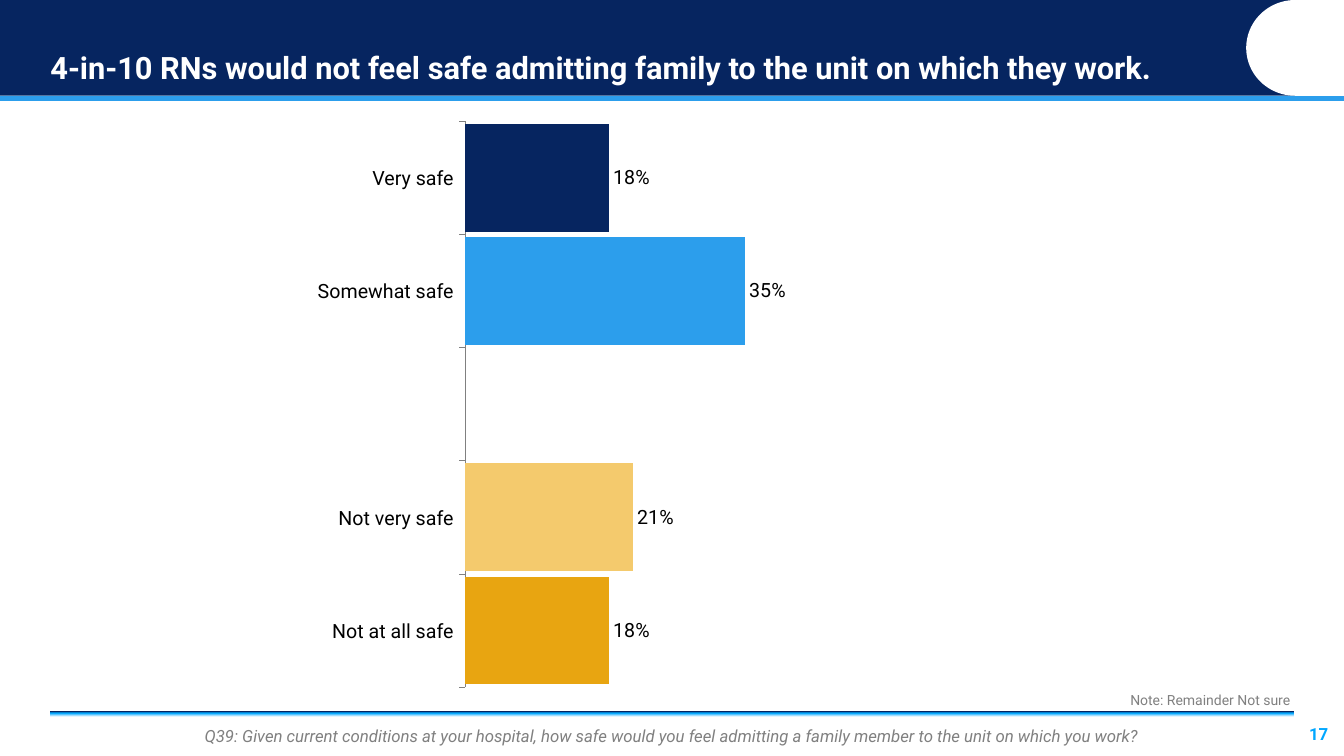
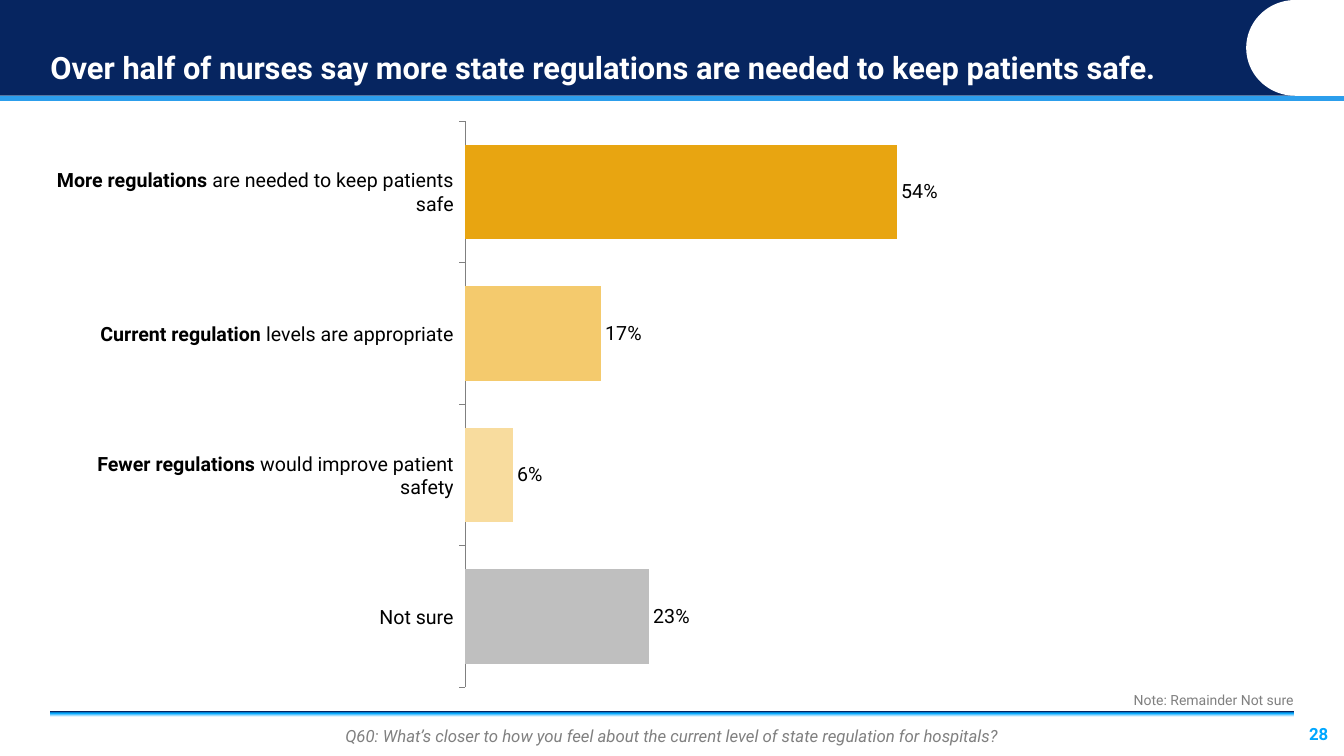
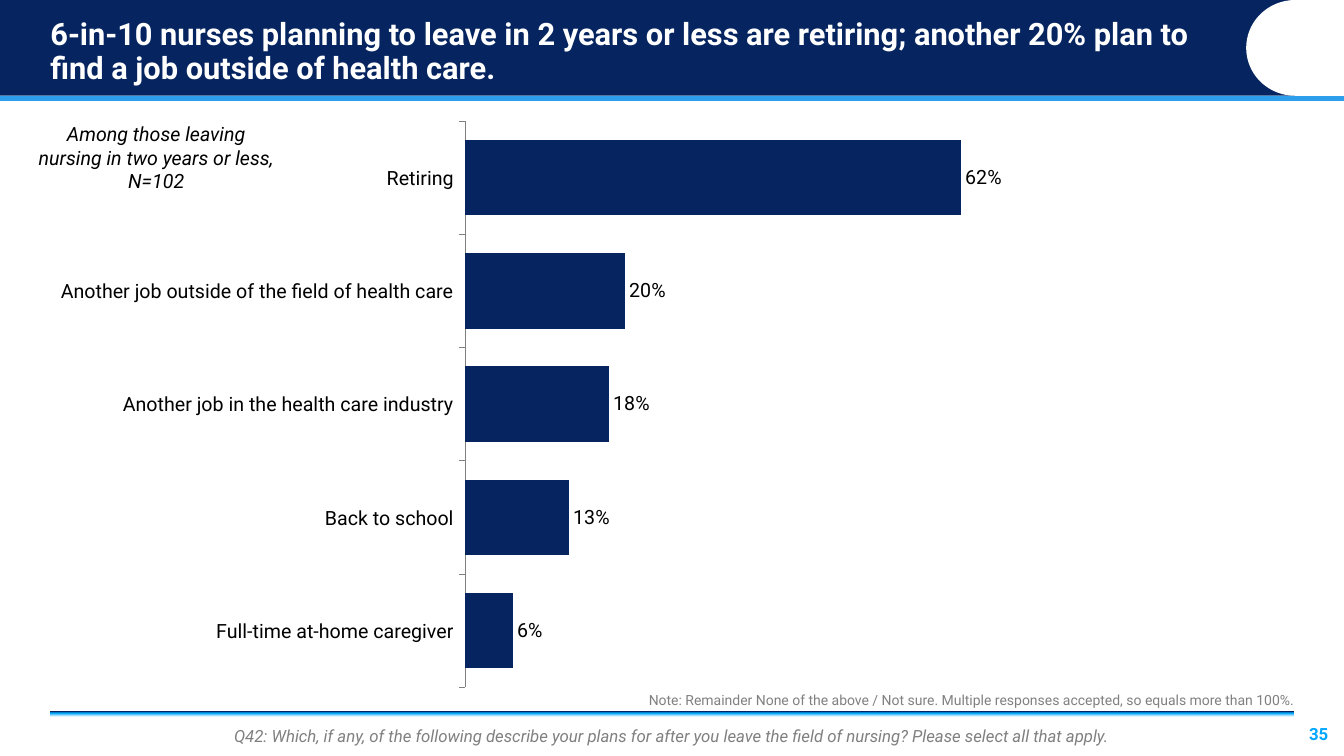
from pptx import Presentation
from pptx.chart.data import CategoryChartData
from pptx.dml.color import RGBColor
from pptx.enum.chart import XL_CHART_TYPE as ChartType, XL_LABEL_POSITION as LabelPos
from pptx.enum.chart import XL_TICK_LABEL_POSITION as TickLabelPos, XL_TICK_MARK as TickMark
from pptx.enum.shapes import MSO_SHAPE as Preset
from pptx.enum.text import MSO_ANCHOR as Anchor, PP_ALIGN as Align
from pptx.oxml import parse_xml
from pptx.oxml.ns import nsdecls, qn
from pptx.util import Inches, Pt


class Theme:
    font = "Roboto"
    navy, blue, sky, pale_sky = "062560", "2C9EEC", "00A7FF", "CCEDFF"
    gold, light_gold, pale_gold = "E8A511", "F4CA6D", "F8DC9E"
    gray, light_gray, black, white = "808080", "BFBFBF", "000000", "FFFFFF"
    title_size, label_size, footer_size, note_size = 22, 14, 12, 10


# Content: each bar is (label runs as (text, bold), value, colour)
SLIDES = [
    {
        "number": 17,
        "title": "4-in-10 RNs would not feel safe admitting family to the unit on which they work.",
        "bars": [
            ([("Very safe", False)], 0.18, Theme.navy),
            ([("Somewhat safe", False)], 0.35, Theme.blue),
            ([], None, None),
            ([("Not very safe", False)], 0.21, Theme.light_gold),
            ([("Not at all safe", False)], 0.18, Theme.gold),
        ],
        "gap": 5,
        "note": "Note: Remainder Not sure ",
        "question": "Q39: Given current conditions at your hospital, how safe would you feel "
                    "admitting a family member to the unit on which you work?",
    },
    {
        "number": 28,
        "title": "Over half of nurses say more state regulations are needed to keep patients safe.",
        "bars": [
            ([("More regulations ", True), ("are needed to keep patients safe", False)], 0.54, Theme.gold),
            ([("Current regulation ", True), ("levels are appropriate", False)], 0.17, Theme.light_gold),
            ([("Fewer regulations ", True), ("would improve patient safety", False)], 0.06, Theme.pale_gold),
            ([("Not sure", False)], 0.23, Theme.light_gray),
        ],
        "gap": 50,
        "note": "Note: Remainder Not sure",
        "question": "Q60: What’s closer to how you feel about the current level of state "
                    "regulation for hospitals?",
    },
    {
        "number": 35,
        "title": "6-in-10 nurses planning to leave in 2 years or less are retiring; "
                 "another 20% plan to find a job outside of health care.",
        "bars": [
            ([("Retiring", False)], 0.62, Theme.navy),
            ([("Another job outside of the field of health care", False)], 0.2, Theme.navy),
            ([("Another job in the health care industry", False)], 0.18, Theme.navy),
            ([("Back to school", False)], 0.13, Theme.navy),
            ([("Full-time at-home caregiver", False)], 0.06, Theme.navy),
        ],
        "gap": 50,
        "note": "Note: Remainder None of the above / Not sure. "
                "Multiple responses accepted, so equals more than 100%.",
        "question": "Q42: Which, if any, of the following describe your plans for after you leave "
                    "the field of nursing? Please select all that apply.",
        "base": ["Among those leaving nursing in two years or less,", "N=102"],
    },
]

# Shared geometry: left, top, width, height in inches
PAGE = (13.33, 7.5)
BAND = (0, 0, 13.33, 0.95)
RULE = (0, 0.95, 13.33, 0.05)
CUTOUT = (12.36, 0, 0.97, 0.95)
TITLE = (0.5, 0.1, 11.75, 0.75)
LABELS = (0.5, 1.21, 4, 5.62)
CHART = (4.55, 1.07, 8.28, 5.76)
BASE = (0.36, 1.21, 2.38, 0.71)
NOTE = (0.5, 6.84, 12.33, 0.21)
FOOTER = (0.5, 7.05, 12.33, 0.45)
NUMBER = (12.83, 7.05, 0.5, 0.45)

PLOT = {"x": 0.007, "y": 0.023, "w": 0.959, "h": 0.975}
FOOTER_STOPS = [(0, Theme.white), (86, Theme.white), (88, Theme.pale_sky),
                (94, Theme.sky), (100, Theme.navy)]


def place(box):
    return [Inches(length) for length in box]


def rgb(colour):
    return RGBColor.from_string(colour)


def add_run(paragraph, text, size, colour, bold=False, italic=False):
    run = paragraph.add_run()
    run.text = text
    font = run.font
    font.name, font.size, font.bold, font.italic = Theme.font, Pt(size), bold, italic
    font.color.rgb = rgb(colour)


def write(shape, lines, size, colour, align, anchor=Anchor.MIDDLE, top=0, bottom=0,
          spacing=None, **style):
    frame = shape.text_frame
    frame.word_wrap = True
    frame.vertical_anchor = anchor
    frame.margin_left = frame.margin_right = 0
    frame.margin_top, frame.margin_bottom = Inches(top), Inches(bottom)
    for index, line in enumerate(lines):
        paragraph = frame.add_paragraph() if index else frame.paragraphs[0]
        paragraph.alignment = align
        if spacing:
            paragraph.line_spacing = spacing
        add_run(paragraph, line, size, colour, **style)


def add_block(slide, preset, box, colour):
    block = slide.shapes.add_shape(preset, *place(box))
    block.shadow.inherit = False
    block.fill.solid()
    block.fill.fore_color.rgb = rgb(colour)
    block.line.fill.background()
    return block


def add_text(slide, box, *args, **style):
    write(slide.shapes.add_textbox(*place(box)), *args, **style)


def add_frame(slide, content):
    # Header band with its rounded cut-out
    add_block(slide, Preset.RECTANGLE, BAND, Theme.navy)
    add_block(slide, Preset.RECTANGLE, RULE, Theme.blue)
    add_block(slide, Preset.FLOWCHART_DELAY, CUTOUT, Theme.white).rotation = 180
    add_text(slide, TITLE, [content["title"]], Theme.title_size, Theme.white, Align.LEFT,
             anchor=Anchor.BOTTOM, spacing=0.9, bold=True)

    # Footer, whose gradient draws the rule along its top edge
    footer = add_block(slide, Preset.RECTANGLE, FOOTER, Theme.white)
    footer.fill.gradient()
    footer.fill.gradient_angle = 90
    stops = footer.element.spPr.find(qn("a:gradFill")).find(qn("a:gsLst"))
    for old_stop in list(stops):
        stops.remove(old_stop)
    for percent, colour in FOOTER_STOPS:
        stops.append(parse_xml(f'<a:gs {nsdecls("a")} pos="{percent * 1000}">'
                               f'<a:srgbClr val="{colour}"/></a:gs>'))
    write(footer, [content["question"]], Theme.footer_size, Theme.gray, Align.CENTER,
          top=0.05, italic=True)
    add_text(slide, NUMBER, [str(content["number"])], Theme.footer_size, Theme.sky,
             Align.CENTER, bold=True)


def add_labels(slide, bars):
    table = slide.shapes.add_table(len(bars), 1, *place(LABELS)).table
    table.first_row = table.horz_banding = False
    for row, (runs, _, _) in zip(table.rows, bars):
        row.height = Inches(LABELS[3] / len(bars))
        cell = row.cells[0]
        cell.fill.background()
        cell.vertical_anchor = Anchor.MIDDLE
        cell.margin_left = cell.margin_right = cell.margin_top = cell.margin_bottom = 0
        paragraph = cell.text_frame.paragraphs[0]
        paragraph.alignment = Align.RIGHT
        for text, bold in runs:
            add_run(paragraph, text, Theme.label_size, Theme.black, bold)


def add_bars(slide, bars, gap):
    data = CategoryChartData(number_format="0%")
    data.categories = [str(index + 1) for index in range(len(bars))]
    data.add_series("Series 1", [value for _, value, _ in bars])
    chart = slide.shapes.add_chart(ChartType.BAR_CLUSTERED, *place(CHART), data).chart
    chart.has_legend = chart.has_title = False
    chart.font.name, chart.font.size = Theme.font, Pt(Theme.label_size)
    chart.font.color.rgb = rgb(Theme.black)

    # Axes
    categories, values = chart.category_axis, chart.value_axis
    categories.reverse_order = True
    categories.tick_label_position = TickLabelPos.NONE
    categories.major_tick_mark = TickMark.OUTSIDE
    categories.format.line.color.rgb = rgb(Theme.gray)
    categories.format.line.width = Pt(0.5)
    values.minimum_scale, values.maximum_scale = 0, 1
    values.has_major_gridlines = values.visible = False

    # Bars and value labels
    plot = chart.plots[0]
    plot.gap_width, plot.vary_by_categories = gap, False
    series = plot.series[0]
    series.format.fill.solid()
    series.format.fill.fore_color.rgb = rgb(Theme.navy)
    for index, (_, _, colour) in enumerate(bars):
        if colour:
            fill = series.points[index].format.fill
            fill.solid()
            fill.fore_color.rgb = rgb(colour)
    labels = series.data_labels
    labels.show_value, labels.position = True, LabelPos.OUTSIDE_END
    labels.number_format, labels.number_format_is_linked = "0%", False

    # Fixed plot area, so bars line up with the label rows
    area = chart.element.find(qn("c:chart")).find(qn("c:plotArea"))
    for old_layout in area.findall(qn("c:layout")):
        area.remove(old_layout)
    modes = "".join(f'<c:{side}Mode val="edge"/>' for side in "xy")
    sizes = "".join(f'<c:{side} val="{share}"/>' for side, share in PLOT.items())
    area.insert(0, parse_xml(
        f'<c:layout {nsdecls("c")}><c:manualLayout><c:layoutTarget val="inner"/>'
        f'{modes}{sizes}</c:manualLayout></c:layout>'))


def main():
    deck = Presentation()
    deck.slide_width, deck.slide_height = place(PAGE)
    for content in SLIDES:
        slide = deck.slides.add_slide(deck.slide_layouts[6])
        add_frame(slide, content)
        add_labels(slide, content["bars"])
        add_text(slide, NOTE, [content["note"]], Theme.note_size, Theme.gray, Align.RIGHT,
                 top=0.04, bottom=0.04)
        add_bars(slide, content["bars"], content["gap"])
        if "base" in content:
            add_text(slide, BASE, content["base"], Theme.label_size, Theme.black,
                     Align.CENTER, anchor=Anchor.TOP, italic=True)
    deck.save("out.pptx")


if __name__ == "__main__":
    main()
